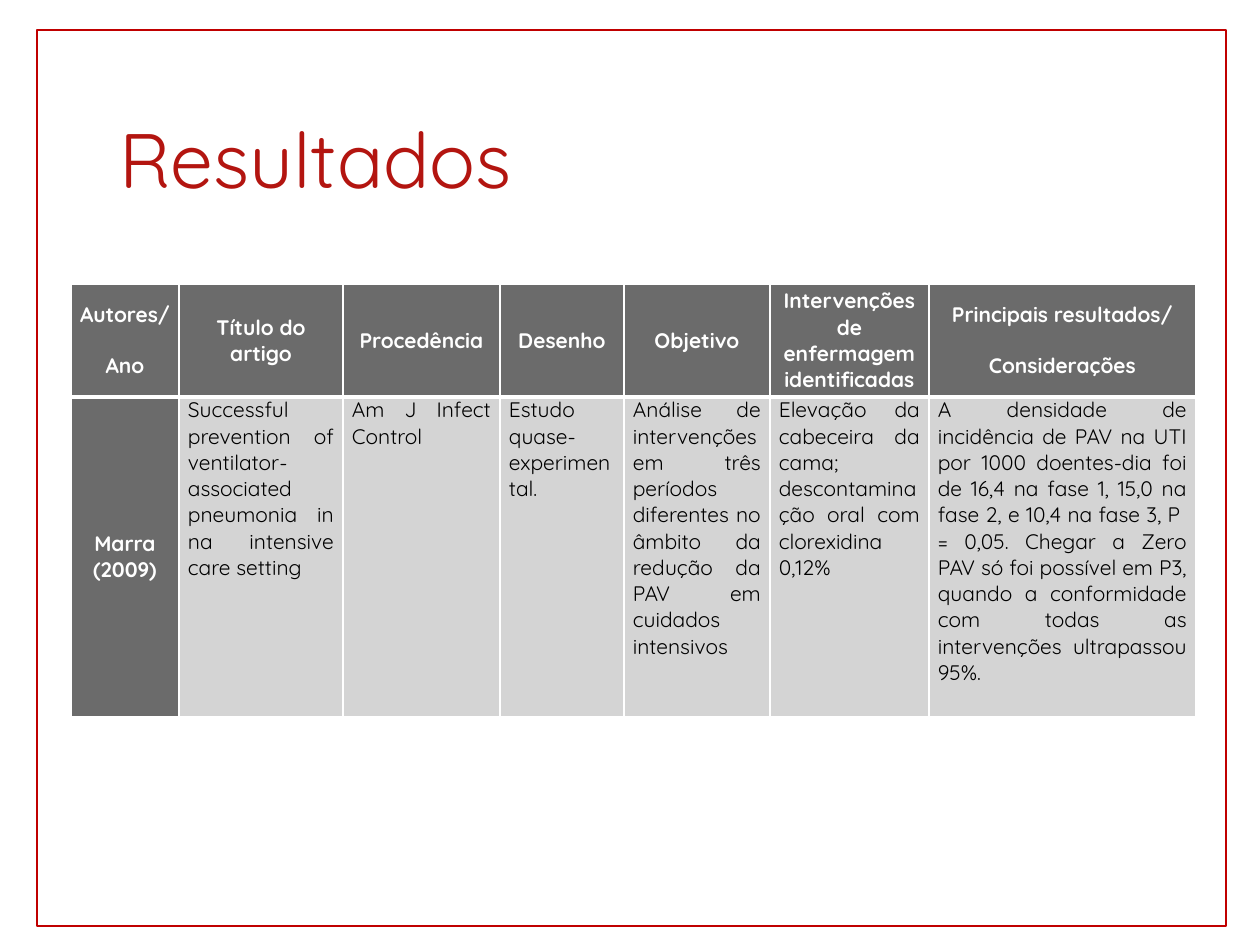
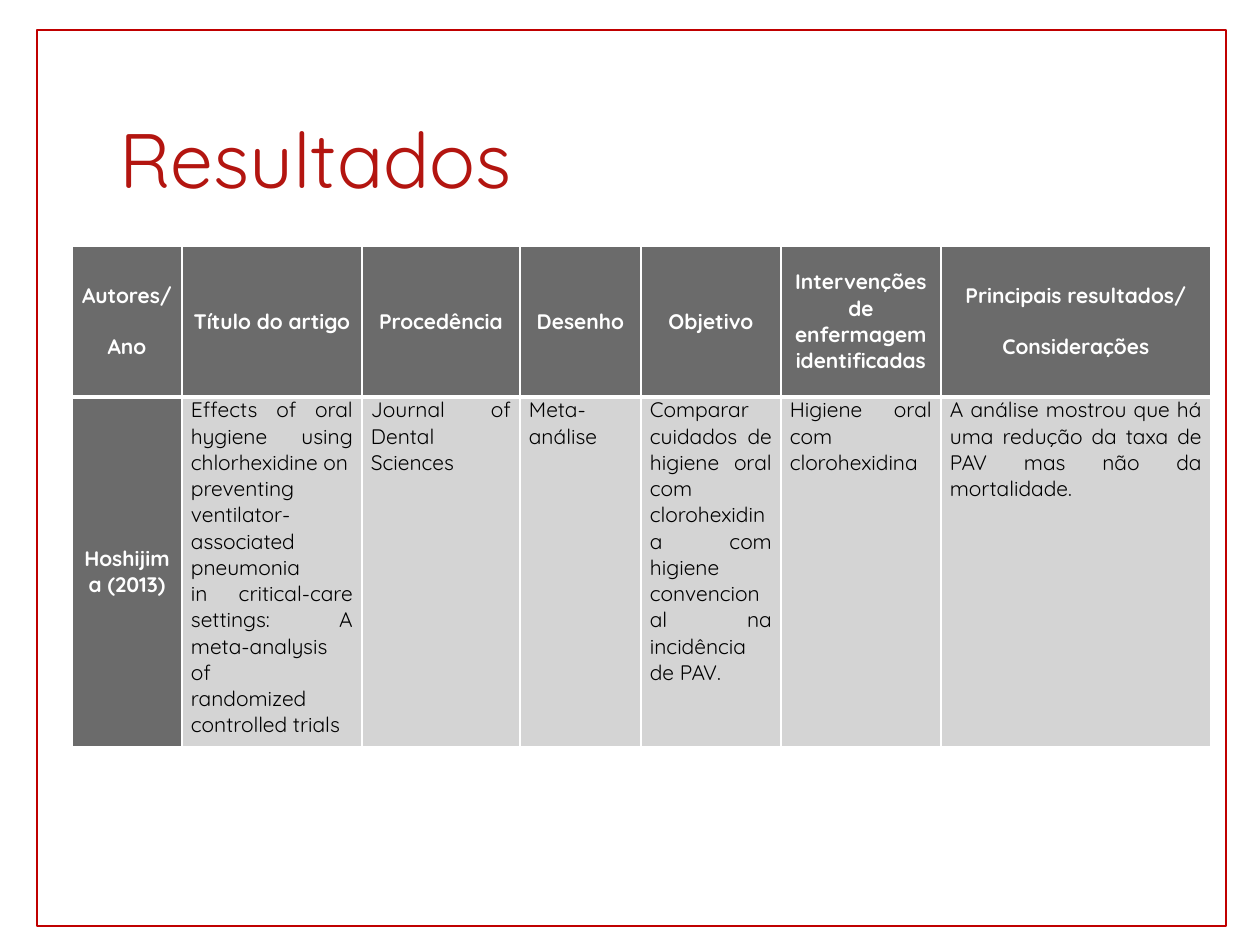
from lxml import etree
from pptx import Presentation
from pptx.dml.color import RGBColor
from pptx.enum.shapes import MSO_SHAPE
from pptx.enum.text import MSO_ANCHOR, PP_ALIGN
from pptx.oxml.ns import qn
from pptx.util import Pt

RECTANGLE = MSO_SHAPE.RECTANGLE
TOP, MIDDLE = MSO_ANCHOR.TOP, MSO_ANCHOR.MIDDLE
LEFT, CENTER, JUSTIFY = PP_ALIGN.LEFT, PP_ALIGN.CENTER, PP_ALIGN.JUSTIFY

PX_PER_INCH = 126
FONT = "Quicksand"
FRAME_RED = "C00000"
TITLE_RED = "B31510"
WHITE, BLACK = "FFFFFF", "000000"
DARK_GRAY, LIGHT_GRAY = "6B6B6B", "D4D4D4"
TITLE_ONLY = 5
CELL_MARGIN = 9
HEADER_RULE = 3

HEADERS = [
    ["Autores/", "Ano"],
    ["Título do artigo"],
    ["Procedência"],
    ["Desenho"],
    ["Objetivo"],
    ["Intervenções de enfermagem identificadas"],
    ["Principais resultados/", "Considerações"],
]

MARRA = [
    ["Marra (2009)"],
    ["Successful prevention of ventilator-associated pneumonia in na intensive care setting"],
    ["Am J Infect Control"],
    ["Estudo quase-experimental."],
    ["Análise de intervenções em três períodos diferentes no âmbito da redução da PAV "
     "em cuidados intensivos"],
    ["Elevação da cabeceira da cama; descontaminação oral com clorexidina 0,12%"],
    ["A densidade de incidência de PAV na UTI por 1000 doentes-dia foi de 16,4 na fase 1, "
     "15,0 na fase 2, e 10,4 na fase 3, P  = 0,05. Chegar a Zero PAV só foi possível em P3, "
     "quando a conformidade com todas as intervenções ultrapassou 95%."],
]

HOSHIJIMA = [
    ["Hoshijima (2013)"],
    ["Effects of oral hygiene using chlorhexidine on",
     "preventing ventilator-associated pneumonia",
     "in critical-care settings: A meta-analysis of",
     "randomized controlled trials"],
    ["Journal of Dental Sciences"],
    ["Meta-análise"],
    ["Comparar cuidados de higiene oral com clorohexidina com higiene convencional "
     "na incidência", "de PAV."],
    ["Higiene oral com clorohexidina"],
    ["A análise mostrou que há uma redução da taxa de PAV mas não da mortalidade."],
]


def px(length):
    return round(length * 914400 / PX_PER_INCH)


def color(hex_text):
    return RGBColor.from_string(hex_text)


def format_runs(para, size, hex_text, bold=False):
    for span in para.runs:
        span.font.name = FONT
        span.font.size = Pt(size)
        span.font.bold = bold
        span.font.color.rgb = color(hex_text)


def add_master_frame(deck, page):
    """Draw the red frame on a page, then move it to the master that all pages share."""
    frame = page.shapes.add_shape(RECTANGLE, px(37), px(30), px(1189), px(896))
    frame.shadow.inherit = False
    frame.fill.background()
    frame.line.color.rgb = color(FRAME_RED)
    frame.line.width = Pt(1)
    deck.slide_master.shapes.element.append(frame.element)


def add_titled_page(deck, text):
    page = deck.slides.add_slide(deck.slide_layouts[TITLE_ONLY])
    title = page.shapes.title
    title.left, title.top, title.width, title.height = px(107), px(72), px(1086), px(183)
    title.text_frame.text = text
    title.text_frame.vertical_anchor = MIDDLE
    para = title.text_frame.paragraphs[0]
    para.alignment = LEFT
    para.line_spacing = 0.9
    format_runs(para, 44, TITLE_RED)
    return page


def set_borders(cell, top, bottom):
    """Give a cell white borders; the sides are 1 point wide."""
    properties = cell._tc.get_or_add_tcPr()
    sides = {"a:lnL": 1, "a:lnR": 1, "a:lnT": top, "a:lnB": bottom}
    for index, (tag, width) in enumerate(sides.items()):
        line = etree.Element(qn(tag), w=str(Pt(width)))
        fill = etree.SubElement(line, qn("a:solidFill"))
        etree.SubElement(fill, qn("a:srgbClr"), val=WHITE)
        properties.insert(index, line)


def fill_cell(cell, texts, is_label, gap):
    cell.fill.solid()
    cell.fill.fore_color.rgb = color(DARK_GRAY if is_label else LIGHT_GRAY)
    cell.vertical_anchor = MIDDLE if is_label else TOP
    cell.margin_left = cell.margin_right = px(CELL_MARGIN)
    cell.margin_top = cell.margin_bottom = 0
    cell.text_frame.text = "\n".join(texts)
    for index, para in enumerate(cell.text_frame.paragraphs):
        para.alignment = CENTER if is_label else JUSTIFY
        para.space_before = Pt(gap if index else 0)
        format_runs(para, 12, WHITE if is_label else BLACK, bold=is_label)


def add_study_table(page, left, top, widths, heights, study):
    table = page.shapes.add_table(
        2, len(widths), px(left), px(top), px(sum(widths)), px(sum(heights))).table
    for column, width in zip(table.columns, widths):
        column.width = px(width)
    for row, height in zip(table.rows, heights):
        row.height = px(height)
    for index, (header, texts) in enumerate(zip(HEADERS, study)):
        header_cell, study_cell = table.cell(0, index), table.cell(1, index)
        fill_cell(header_cell, header, True, gap=14)
        set_borders(header_cell, top=1, bottom=HEADER_RULE)
        fill_cell(study_cell, texts, index == 0, gap=0)
        set_borders(study_cell, top=HEADER_RULE, bottom=1)


def main():
    deck = Presentation()
    deck.slide_width, deck.slide_height = px(1260), px(945)

    marra_page = add_titled_page(deck, "Resultados")
    add_master_frame(deck, marra_page)
    add_study_table(marra_page, 71, 284, [108, 164, 157, 124, 146, 159, 267],
                    [113, 320], MARRA)

    hoshijima_page = add_titled_page(deck, "Resultados")
    add_study_table(hoshijima_page, 72, 246, [110, 180, 158, 121, 140, 160, 270],
                    [151, 350], HOSHIJIMA)

    deck.save("out.pptx")


if __name__ == "__main__":
    main()
